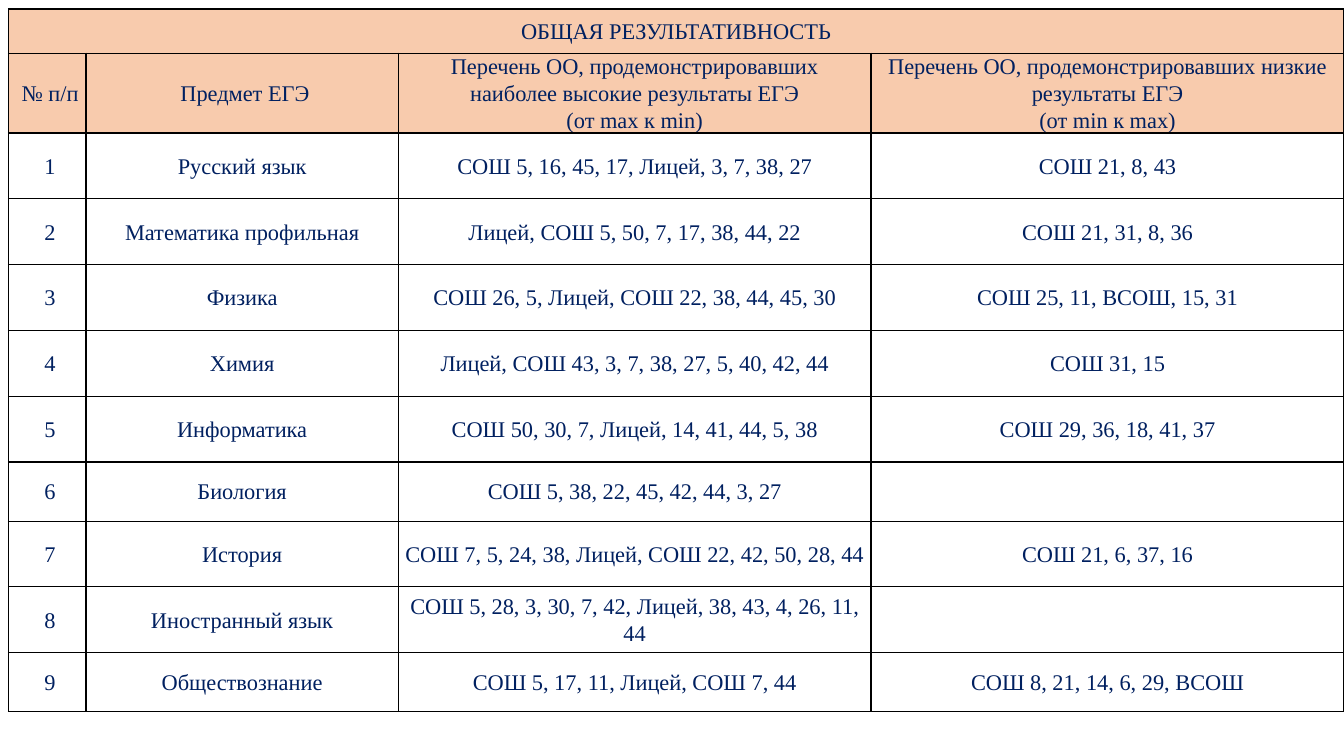
from pptx import Presentation
from pptx.dml.color import RGBColor
from pptx.enum.text import MSO_ANCHOR, PP_ALIGN
from pptx.oxml.xmlchemy import OxmlElement
from pptx.util import Pt

CENTER = PP_ALIGN.CENTER
MIDDLE = MSO_ANCHOR.MIDDLE
COLORS = {"text": "002060", "header": "F8CBAD", "border": "000000"}
NBSP = " "

COLUMN_WIDTHS = [55.5, 223, 337.75, 337.75]
TITLE_HEIGHT, HEADER_HEIGHT, ROW_HEIGHT, SHORT_ROW_HEIGHT = 31.5, 57, 47, 42.25
SHORT_SUBJECTS = ("Биология", "Обществознание")

TITLE = "ОБЩАЯ РЕЗУЛЬТАТИВНОСТЬ"
HEADERS = [
    [NBSP + "№ п/п"],
    [NBSP + "Предмет ЕГЭ"],
    ["Перечень ОО, продемонстрировавших наиболее высокие результаты ЕГЭ", "(от max к min)"],
    ["Перечень ОО, продемонстрировавших низкие результаты ЕГЭ", "(от min к max)"],
]
SUBJECTS = [
    ("Русский язык", "СОШ 5, 16, 45, 17, Лицей, 3, 7, 38, 27", "СОШ 21, 8, 43"),
    ("Математика профильная", "Лицей, СОШ 5, 50, 7, 17, 38, 44, 22", "СОШ 21, 31, 8, 36"),
    ("Физика", "СОШ 26, 5, Лицей, СОШ 22, 38, 44, 45, 30", "СОШ 25, 11, ВСОШ, 15, 31"),
    ("Химия", "Лицей, СОШ 43, 3, 7, 38, 27, 5, 40, 42, 44", "СОШ 31, 15"),
    ("Информатика", "СОШ 50, 30, 7, Лицей, 14, 41, 44, 5, 38", "СОШ 29, 36, 18, 41, 37"),
    ("Биология", "СОШ 5, 38, 22, 45, 42, 44, 3, 27", ""),
    ("История", "СОШ 7, 5, 24, 38, Лицей, СОШ 22, 42, 50, 28, 44", "СОШ 21, 6, 37, 16"),
    ("Иностранный язык", "СОШ 5, 28, 3, 30, 7, 42, Лицей, 38, 43, 4, 26, 11, 44", ""),
    ("Обществознание", "СОШ 5, 17, 11, Лицей, СОШ 7, 44", "СОШ 8, 21, 14, 6, 29, ВСОШ"),
]


class SlideBuilder:
    font_name = "Times New Roman"
    font_size = 16
    line_spacing = 1.07
    side_margin = 5
    border_width = 1

    def __init__(self, slide):
        self.slide = slide

    def add_table(self, left, top, widths, heights):
        frame = self.slide.shapes.add_table(
            len(heights), len(widths), Pt(left), Pt(top), Pt(sum(widths)), Pt(sum(heights)))
        table = frame.table
        table.first_row = False
        table.horz_banding = False
        for column, width in zip(table.columns, widths):
            column.width = Pt(width)
        for row, height in zip(table.rows, heights):
            row.height = Pt(height)
        return table

    def style_cell(self, cell, fill=None):
        cell.vertical_anchor = MIDDLE
        cell.margin_left = cell.margin_right = Pt(self.side_margin)
        cell.margin_top = cell.margin_bottom = Pt(0)
        self.add_borders(cell)
        if fill:
            cell.fill.solid()
            cell.fill.fore_color.rgb = RGBColor.from_string(COLORS[fill])
        else:
            cell.fill.background()

    def add_borders(self, cell):
        properties = cell._tc.get_or_add_tcPr()
        for side in ("L", "R", "T", "B"):
            line = OxmlElement(f"a:ln{side}")
            line.set("w", str(Pt(self.border_width)))
            solid = OxmlElement("a:solidFill")
            color = OxmlElement("a:srgbClr")
            color.set("val", COLORS["border"])
            solid.append(color)
            line.append(solid)
            properties.append(line)

    def write_cell(self, cell, lines):
        """Write each line as its own centred paragraph."""
        text_frame = cell.text_frame
        for index, line in enumerate(lines):
            paragraph = text_frame.add_paragraph() if index else text_frame.paragraphs[0]
            paragraph.alignment = CENTER
            paragraph.line_spacing = self.line_spacing
            if not line:
                continue
            run = paragraph.add_run()
            run.text = line
            run.font.name = self.font_name
            run.font.size = Pt(self.font_size)
            run.font.color.rgb = RGBColor.from_string(COLORS["text"])


def main():
    presentation = Presentation()
    presentation.slide_width = Pt(960)
    presentation.slide_height = Pt(540)
    builder = SlideBuilder(presentation.slides.add_slide(presentation.slide_layouts[6]))

    subject_heights = [SHORT_ROW_HEIGHT if subject[0] in SHORT_SUBJECTS else ROW_HEIGHT
                       for subject in SUBJECTS]
    table = builder.add_table(
        6, 6.5, COLUMN_WIDTHS, [TITLE_HEIGHT, HEADER_HEIGHT] + subject_heights)
    table.cell(0, 0).merge(table.cell(0, len(COLUMN_WIDTHS) - 1))

    rows = [[[TITLE], [], [], []], HEADERS]
    for number, subject in enumerate(SUBJECTS, start=1):
        rows.append([[f"{NBSP}{number}"]] + [[text] for text in subject])

    for row_index, row in enumerate(rows):
        for column_index, lines in enumerate(row):
            cell = table.cell(row_index, column_index)
            builder.style_cell(cell, "header" if row_index < 2 else None)
            builder.write_cell(cell, lines)

    presentation.save("out.pptx")


if __name__ == "__main__":
    main()
